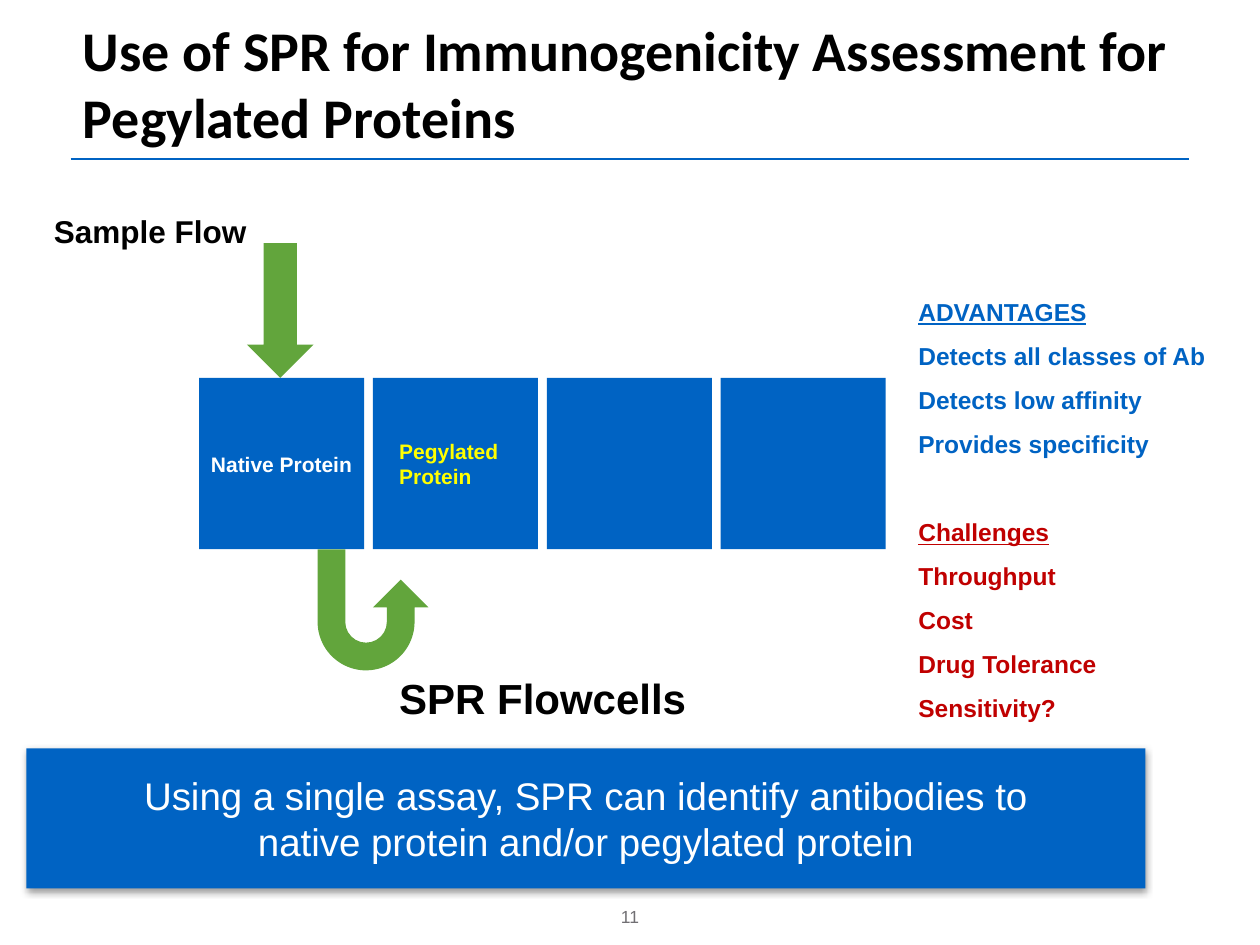
"""Builds a slide on SPR immunogenicity assessment for pegylated proteins."""
from lxml import etree
from pptx import Presentation
from pptx import util as u
from pptx.dml.color import RGBColor
from pptx.enum import shapes, text
from pptx.oxml import parse_xml
from pptx.oxml.ns import nsdecls, qn

PX = 9144
BLUE, GREEN, RED = "0063C3", "62A53C", "C00000"
WHITE, BLACK, GRAY, YELLOW = "FFFFFF", "000000", "716F73", "FFFF00"
KIND = shapes.MSO_SHAPE
ALIGN = text.PP_ALIGN
ANCHOR = text.MSO_ANCHOR


def tint(code):
    return RGBColor.from_string(code)


def scale(*box):
    return [u.Emu(n * PX) for n in box]


class Deck:
    def __init__(self, wide, high):
        self.show = Presentation()
        self.show.slide_width, self.show.slide_height = scale(wide, high)
        self.slide = self.show.slides.add_slide(self.show.slide_layouts[6])

    def letter(self, item, lines, size, color, bold=True, align=ALIGN.LEFT,
               anchor=ANCHOR.TOP, wrap=True, face="Arial"):
        frame = item.text_frame
        frame.word_wrap = wrap
        frame.vertical_anchor = anchor
        frame.text = "\n".join(lines)
        for para in frame.paragraphs:
            para.alignment = align
            font = para.runs[0].font
            font.name, font.size, font.bold = face, u.Pt(size), bold
            font.color.rgb = tint(color)
        return frame.paragraphs

    def label(self, box, lines, size, color, **style):
        item = self.slide.shapes.add_textbox(*scale(*box))
        return self.letter(item, lines, size, color, **style)

    def shape(self, kind, box, color):
        item = self.slide.shapes.add_shape(kind, *scale(*box))
        item.shadow.inherit = False
        item.fill.solid()
        item.fill.fore_color.rgb = tint(color)
        item.line.fill.background()
        return item

    def rule(self, start, end, color):
        item = self.slide.shapes.add_connector(
            shapes.MSO_CONNECTOR.STRAIGHT, *scale(*start, *end))
        item.line.color.rgb = tint(color)
        item.line.width = u.Pt(1)
        etree.SubElement(item._element.spPr, qn("a:effectLst"))

    def shade(self, item):
        glow = parse_xml(
            f'<a:outerShdw {nsdecls("a")} blurRad="{u.Pt(4)}" dist="{u.Pt(2)}" '
            'dir="5400000" algn="t" rotWithShape="0"><a:srgbClr val="000000">'
            '<a:alpha val="40000"/></a:srgbClr></a:outerShdw>')
        item._element.spPr.find(qn("a:effectLst")).append(glow)

    def notes(self, box, groups):
        lines = [line for _, group in groups for line in group]
        paras = iter(self.label(box, lines, 14, BLACK))
        for rank, (color, group) in enumerate(groups):
            for spot in range(len(group)):
                para = next(paras)
                para.line_spacing = 1.5
                font = para.runs[0].font
                font.color.rgb = tint(color)
                font.underline = spot == 0
                if rank and not spot:
                    para.space_before = u.Pt(25)


def main():
    deck = Deck(1000, 750)
    deck.rule((56, 126), (944, 126), BLUE)
    deck.label((396, 701, 208, 40), ["11"], 10, GRAY, bold=False,
               align=ALIGN.CENTER, anchor=ANCHOR.BOTTOM)
    deck.label((56, 4, 888, 120),
               ["Use of SPR for Immunogenicity Assessment for Pegylated Proteins"],
               32, BLACK, anchor=ANCHOR.BOTTOM, face="Calibri")

    cells = [deck.shape(KIND.RECTANGLE, (158 + 138 * i, 300, 131, 136), BLUE)
             for i in range(4)]
    deck.letter(cells[0], ["Native Protein"], 12, WHITE, align=ALIGN.CENTER,
                anchor=ANCHOR.MIDDLE, wrap=False)
    deck.label((307, 343, 107, 50), ["Pegylated Protein"], 12, YELLOW)
    deck.label((307, 529, 250, 50), ["SPR Flowcells"], 24, BLACK, wrap=False)

    deck.shape(KIND.DOWN_ARROW, (196, 193, 53, 107), GREEN)
    deck.label((33, 163, 174, 40), ["Sample Flow"], 18, BLACK, wrap=False)
    turn = deck.shape(KIND.U_TURN_ARROW, (252, 436, 88, 96), GREEN)
    turn.rotation = 180
    turn._element.spPr.xfrm.set("flipH", "1")

    deck.notes((719, 219, 256, 364), [
        (BLUE, ["ADVANTAGES", "Detects all classes of Ab",
                "Detects low affinity", "Provides specificity"]),
        (RED, ["Challenges", "Throughput", "Cost", "Drug Tolerance",
               "Sensitivity?"]),
    ])

    banner = deck.shape(KIND.RECTANGLE, (21, 594, 888, 111), BLUE)
    deck.shade(banner)
    deck.letter(banner, ["Using a single assay, SPR can identify antibodies to",
                         "native protein and/or pegylated protein"],
                22, WHITE, bold=False, align=ALIGN.CENTER,
                anchor=ANCHOR.MIDDLE, wrap=False)
    deck.show.save("out.pptx")


if __name__ == "__main__":
    main()
